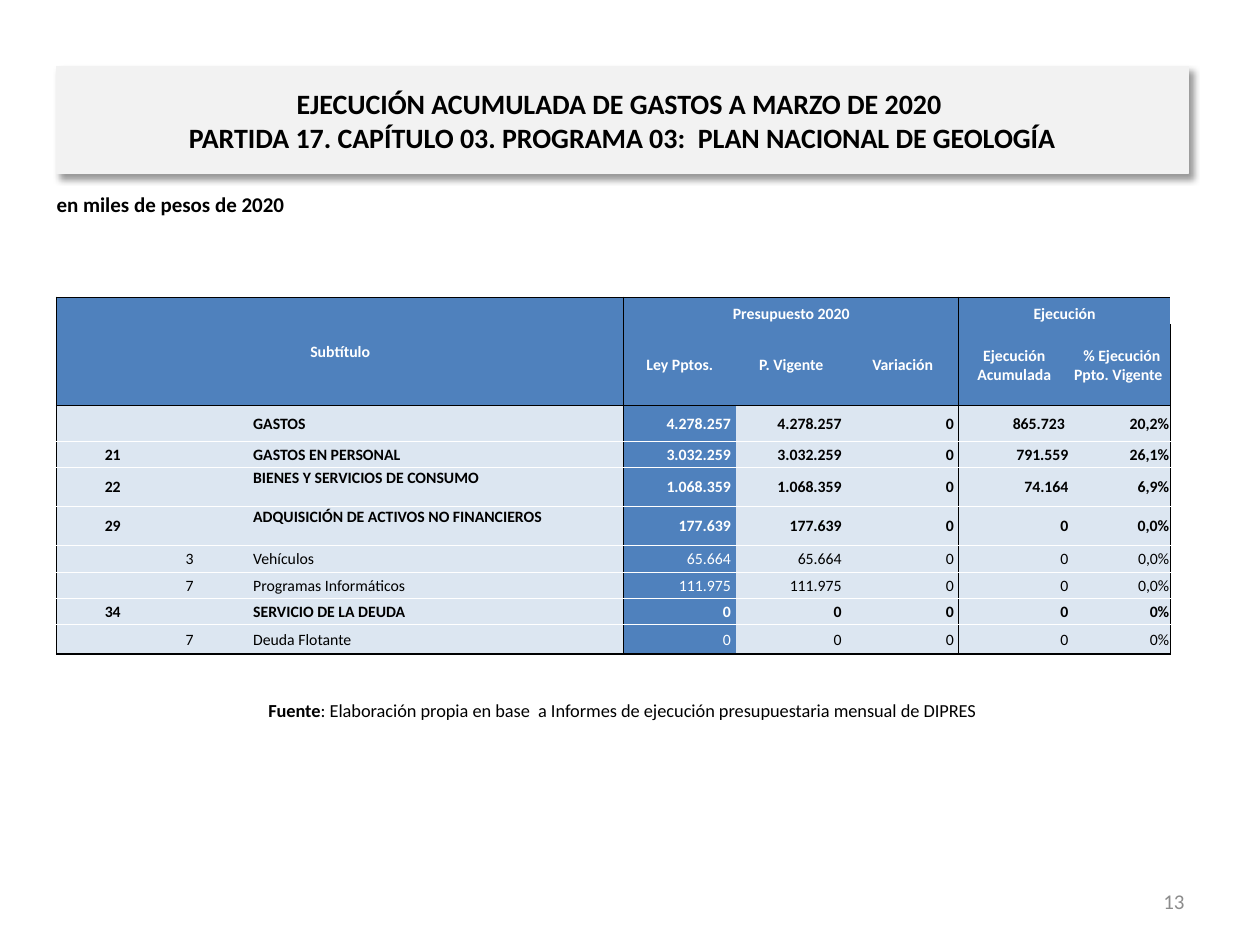
from dataclasses import dataclass

from lxml.etree import SubElement
from pptx import Presentation
from pptx.dml.color import RGBColor
from pptx.enum.text import MSO_ANCHOR, MSO_AUTO_SIZE, PP_ALIGN
from pptx.oxml.ns import qn
from pptx.util import Inches, Pt


@dataclass(frozen=True)
class Theme:
    font: str = "Calibri"
    black: str = "000000"
    white: str = "FFFFFF"
    gray: str = "8C8C8C"
    title_fill: str = "F2F2F2"
    header_fill: str = "4F81BD"
    body_fill: str = "DCE6F1"
    title_size: float = 16
    text_size: float = 12
    source_size: float = 10.5
    table_size: float = 9


THEME = Theme()

TITLE = ("EJECUCIÓN ACUMULADA DE GASTOS A MARZO DE 2020 \v"
         "PARTIDA 17. CAPÍTULO 03. PROGRAMA 03:  PLAN NACIONAL DE GEOLOGÍA")

# Table content: subtitle, item, label, budget law, current budget, variation, executed, percentage
COLUMN_WIDTHS = [0.89, 0.33, 0.33, 2.95, 0.89, 0.88, 0.89, 0.88, 0.80]
ROW_HEIGHTS = [0.21, 0.65, 0.28, 0.21, 0.31, 0.31, 0.21, 0.21, 0.21, 0.23]
COLUMN_HEADERS = ["Ley Pptos.", "P. Vigente", "Variación",
                  "Ejecución Acumulada", " % Ejecución Ppto. Vigente "]
GROUP_HEADERS = [  # text, first cell, last cell
    ("Subtítulo", (0, 0), (1, 3)),
    ("Presupuesto 2020", (0, 4), (0, 6)),
    ("Ejecución", (0, 7), (0, 8)),
]
BUDGET_ROWS = [
    ("", "", "GASTOS", "4.278.257", "4.278.257", "0", "865.723 ", "20,2%"),
    ("21", "", "GASTOS EN PERSONAL", "3.032.259", "3.032.259", "0", "791.559", "26,1%"),
    ("22", "", "BIENES Y SERVICIOS DE CONSUMO", "1.068.359", "1.068.359", "0", "74.164", "6,9%"),
    ("29", "", "ADQUISICIÓN DE ACTIVOS NO FINANCIEROS", "177.639", "177.639", "0", "0", "0,0%"),
    ("", "3", "Vehículos", "65.664", "65.664", "0", "0", "0,0%"),
    ("", "7", "Programas Informáticos", "111.975", "111.975", "0", "0", "0,0%"),
    ("34", "", "SERVICIO DE LA DEUDA", "0", "0", "0", "0", "0%"),
    ("", "7", "Deuda Flotante", "0", "0", "0", "0", "0%"),
]
TOP_ALIGNED_SUBTITLES = ("22", "29")
LABEL_COLUMN, LAW_COLUMN = 3, 4
PADDED_COLUMNS = (4, 5, 6)

# Table rules by grid line: colour and width
THIN, THICK = (THEME.black, 0.5), (THEME.black, 1)
VERTICAL_RULES = {0: THICK, 4: THIN, 7: THIN, 9: THICK}
HORIZONTAL_RULES = {0: THICK, 1: None, 2: THIN, 10: THICK}
ROW_RULE = (THEME.white, 0.5)


def write_text(frame, text, *, size, color=THEME.black, bold=False,
               align=PP_ALIGN.LEFT, anchor=MSO_ANCHOR.MIDDLE, lead=""):
    """Fill a text frame with one paragraph, after an optional bold lead."""
    frame.word_wrap = True
    frame.vertical_anchor = anchor
    paragraph = frame.paragraphs[0]
    paragraph.alignment = align
    for index, line in enumerate(text.split("\v")):
        if index:
            paragraph.add_line_break()
        parts = [(lead, True), (line, bold)] if index == 0 else [(line, bold)]
        for part, is_bold in parts:
            if part:
                run = paragraph.add_run()
                run.text = part
                run.font.name = THEME.font
                run.font.size = Pt(size)
                run.font.bold = is_bold
                run.font.color.rgb = RGBColor.from_string(color)
    # Keeps empty cells as low as the filled ones
    paragraph._p.get_or_add_endParaRPr().set("sz", str(int(size * 100)))


def add_text(slide, left, top, width, height, text, **text_format):
    box = slide.shapes.add_textbox(Inches(left), Inches(top), Inches(width), Inches(height))
    write_text(box.text_frame, text, **text_format)


def add_shadow(shape):
    effects = SubElement(shape._element.spPr, qn("a:effectLst"))
    shadow = SubElement(effects, qn("a:outerShdw"), blurRad=str(Pt(4)), dist=str(Pt(3)),
                        dir=str(45 * 60000), algn="tl", rotWithShape="0")
    color = SubElement(shadow, qn("a:srgbClr"), val=THEME.black)
    SubElement(color, qn("a:alpha"), val="40000")


def format_title(title):
    title.left, title.top = Inches(0.45), Inches(0.53)
    title.width, title.height = Inches(8.98), Inches(0.85)
    title.fill.solid()
    title.fill.fore_color.rgb = RGBColor.from_string(THEME.title_fill)
    title.line.color.rgb = RGBColor.from_string(THEME.title_fill)
    title.line.width = Pt(0.75)
    add_shadow(title)
    write_text(title.text_frame, TITLE, size=THEME.title_size, bold=True, align=PP_ALIGN.CENTER)
    title.text_frame.auto_size = MSO_AUTO_SIZE.NONE


def draw_border(cell, tag, rule):
    line = SubElement(cell._tc.get_or_add_tcPr(), qn(tag))
    if rule is None:
        line.set("w", "0")
        SubElement(line, qn("a:noFill"))
        return
    color, width = rule
    line.set("w", str(Pt(width)))
    SubElement(SubElement(line, qn("a:solidFill")), qn("a:srgbClr"), val=color)


def format_cell(cell, row, column):
    """Set margins, borders and fill from the place in the grid."""
    cell.margin_left = cell.margin_top = Inches(0.01)
    cell.margin_right = Inches(0.04 if row > 1 and column in PADDED_COLUMNS else 0.01)
    cell.margin_bottom = 0
    draw_border(cell, "a:lnL", VERTICAL_RULES.get(column))
    draw_border(cell, "a:lnR", VERTICAL_RULES.get(column + 1))
    draw_border(cell, "a:lnT", HORIZONTAL_RULES.get(row, ROW_RULE))
    draw_border(cell, "a:lnB", HORIZONTAL_RULES.get(row + 1, ROW_RULE))
    is_header = row < 2 or column == LAW_COLUMN
    cell.fill.solid()
    cell.fill.fore_color.rgb = RGBColor.from_string(
        THEME.header_fill if is_header else THEME.body_fill)


def write_cell(cell, text, *, anchor=MSO_ANCHOR.MIDDLE, **text_format):
    write_text(cell.text_frame, text, size=THEME.table_size, **text_format)
    cell.text_frame.vertical_anchor = None
    cell.vertical_anchor = anchor


def write_headers(table):
    header_format = dict(color=THEME.white, bold=True, align=PP_ALIGN.CENTER)
    for text, first, last in GROUP_HEADERS:
        table.cell(*first).merge(table.cell(*last))
        anchor = MSO_ANCHOR.MIDDLE if last[0] else MSO_ANCHOR.BOTTOM
        write_cell(table.cell(*first), text, anchor=anchor, **header_format)
    for column, text in enumerate(COLUMN_HEADERS, LAW_COLUMN):
        write_cell(table.cell(1, column), text, **header_format)


def write_budget_row(table, row, values):
    subtitle, item, label, *amounts = values
    for column, text in enumerate([subtitle, item, "", label, *amounts]):
        align, anchor = PP_ALIGN.RIGHT, MSO_ANCHOR.MIDDLE
        if column < LABEL_COLUMN:
            align = PP_ALIGN.CENTER
        elif column == LABEL_COLUMN:
            align = PP_ALIGN.JUSTIFY
            if subtitle in TOP_ALIGNED_SUBTITLES:
                anchor = MSO_ANCHOR.TOP
        write_cell(table.cell(row, column), text, bold=not item, align=align, anchor=anchor,
                   color=THEME.white if column == LAW_COLUMN else THEME.black)


def add_budget_table(slide):
    table = slide.shapes.add_table(
        len(ROW_HEIGHTS), len(COLUMN_WIDTHS), Inches(0.45), Inches(2.36),
        Inches(sum(COLUMN_WIDTHS)), Inches(sum(ROW_HEIGHTS))).table
    table.first_row = table.horz_banding = False
    for column, width in zip(table.columns, COLUMN_WIDTHS):
        column.width = Inches(width)
    for row, height in enumerate(ROW_HEIGHTS):
        table.rows[row].height = Inches(height)
        for column in range(len(COLUMN_WIDTHS)):
            format_cell(table.cell(row, column), row, column)
    write_headers(table)
    for row, values in enumerate(BUDGET_ROWS, 2):
        write_budget_row(table, row, values)


def main():
    presentation = Presentation()
    presentation.slide_width, presentation.slide_height = Inches(10), Inches(7.5)
    slide = presentation.slides.add_slide(presentation.slide_layouts[5])

    # Heading and unit
    format_title(slide.shapes.title)
    add_text(slide, 0.35, 1.47, 8.15, 0.39, "en miles de pesos de 2020",
             size=THEME.text_size, bold=True, anchor=MSO_ANCHOR.TOP)

    # Budget figures
    add_budget_table(slide)

    # Source and page number
    add_text(slide, 0.45, 5.48, 8.98, 0.31,
             ": Elaboración propia en base  a Informes de ejecución presupuestaria mensual de DIPRES",
             lead="Fuente", size=THEME.source_size, align=PP_ALIGN.CENTER)
    add_text(slide, 7.17, 6.95, 2.33, 0.4, "13",
             size=THEME.text_size, color=THEME.gray, align=PP_ALIGN.RIGHT)

    presentation.save("out.pptx")


if __name__ == "__main__":
    main()
